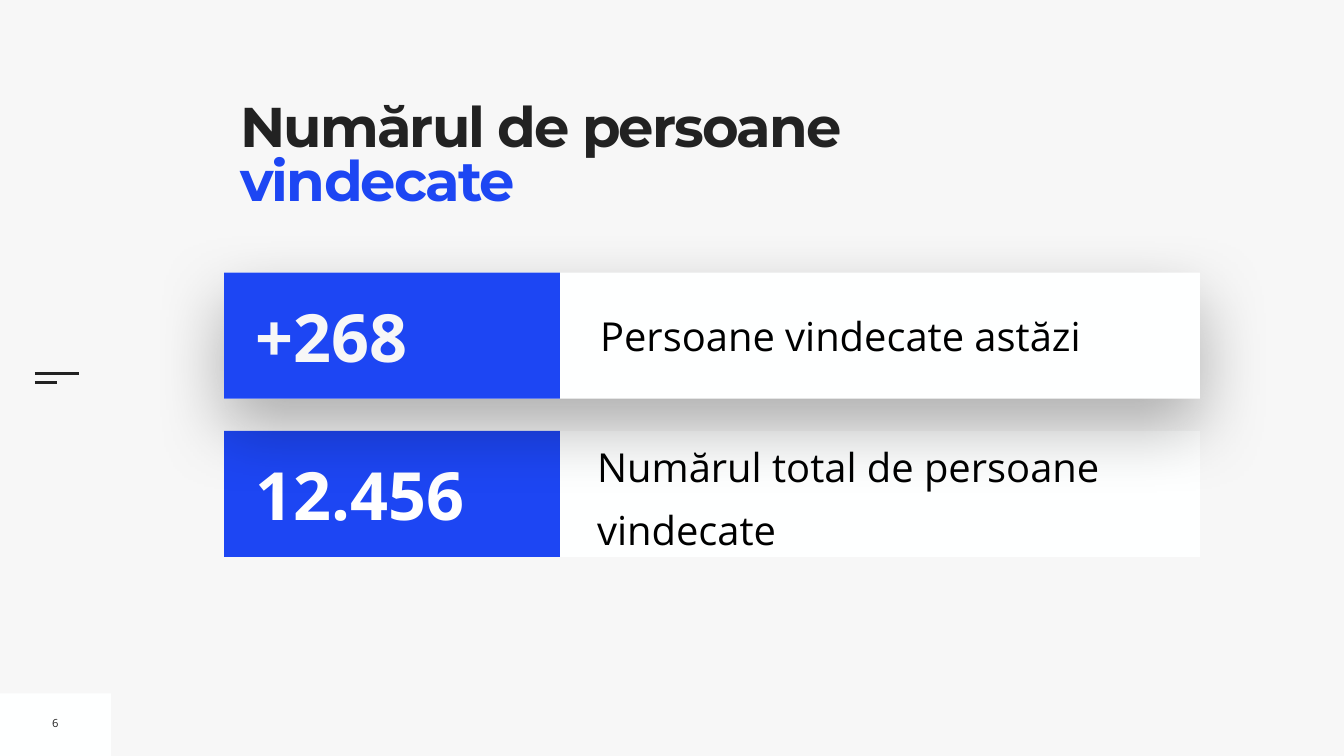
from dataclasses import dataclass

from lxml import etree
from pptx import Presentation
from pptx.dml.color import RGBColor
from pptx.enum.shapes import MSO_CONNECTOR, MSO_SHAPE
from pptx.enum.text import MSO_ANCHOR, PP_ALIGN
from pptx.oxml.ns import qn
from pptx.util import Inches, Pt

RECTANGLE = MSO_SHAPE.RECTANGLE
STRAIGHT = MSO_CONNECTOR.STRAIGHT
TOP, MIDDLE = MSO_ANCHOR.TOP, MSO_ANCHOR.MIDDLE
LEFT, CENTER = PP_ALIGN.LEFT, PP_ALIGN.CENTER


@dataclass(frozen=True)
class Theme:
    background: str = "F7F7F7"
    panel: str = "FEFFFF"
    accent: str = "1D46F3"
    dark: str = "222222"
    black: str = "000000"
    white: str = "FFFFFF"
    heading_font: str = "Montserrat"
    body_font: str = "Open Sans"
    title_size: int = 80
    figure_size: int = 95
    label_size: int = 57
    number_size: int = 16


class SlideBuilder:
    def __init__(self, slide, theme):
        self.slide = slide
        self.theme = theme
        slide.background.fill.solid()
        slide.background.fill.fore_color.rgb = RGBColor.from_string(theme.background)

    def group(self):
        return self.slide.shapes.add_group_shape().shapes

    def rectangle(self, box, color, shapes=None):
        shapes = self.slide.shapes if shapes is None else shapes
        shape = shapes.add_shape(RECTANGLE, *map(Inches, box))
        shape.shadow.inherit = False
        shape.fill.solid()
        shape.fill.fore_color.rgb = RGBColor.from_string(color)
        shape.line.fill.background()
        return shape

    def shadow(self, shape, blur, distance, opacity):
        effects = shape._element.spPr.find(qn("a:effectLst"))
        outer = etree.SubElement(
            effects, qn("a:outerShdw"), blurRad=str(Pt(blur)), dist=str(Pt(distance)),
            dir=str(90 * 60000), algn="ctr", rotWithShape="0")
        color = etree.SubElement(outer, qn("a:srgbClr"), val=self.theme.black)
        etree.SubElement(color, qn("a:alpha"), val=str(opacity * 1000))

    def line(self, left, right, top):
        connector = self.slide.shapes.add_connector(
            STRAIGHT, *map(Inches, (left, top, right, top)))
        connector.line.color.rgb = RGBColor.from_string(self.theme.dark)
        connector.line.width = Pt(3)
        etree.SubElement(connector._element.spPr, qn("a:effectLst"))

    def frame(self, shape, inset, anchor, wrap=True):
        margin = Inches(inset)
        values = {
            "margin_left": margin, "margin_right": margin, "margin_top": margin,
            "margin_bottom": margin, "vertical_anchor": anchor, "word_wrap": wrap,
        }
        for name, value in values.items():
            setattr(shape.text_frame, name, value)
        return shape.text_frame.paragraphs[0]

    def run(self, paragraph, text, font, size, color, bold=False):
        run = paragraph.add_run()
        run.text = text
        values = {"name": font, "size": Pt(size), "bold": bold}
        for name, value in values.items():
            setattr(run.font, name, value)
        run.font.color.rgb = RGBColor.from_string(color)
        return run

    def text(self, box, text, size, color, bold=False, inset=0.1, wrap=True,
             paragraph_format=None, shapes=None):
        shapes = self.slide.shapes if shapes is None else shapes
        shape = shapes.add_textbox(*map(Inches, box))
        paragraph = self.frame(shape, inset, MIDDLE, wrap)
        for name, value in (paragraph_format or {}).items():
            setattr(paragraph, name, value)
        self.run(paragraph, text, self.theme.body_font, size, color, bold)

    def title(self, box, parts):
        title = self.slide.shapes.title
        title.left, title.top, title.width, title.height = map(Inches, box)
        title.fill.solid()
        title.fill.fore_color.rgb = RGBColor.from_string(self.theme.background)
        paragraph = self.frame(title, 0, TOP)
        paragraph.alignment = LEFT
        paragraph.line_spacing = 0.8
        for text, color in parts:
            run = self.run(paragraph, text, self.theme.heading_font,
                           self.theme.title_size, color, bold=True)
            run.font._element.set("spc", "-270")

    def statistic(self, top, figure, figure_color, label, label_box,
                  label_format=None, label_inset=0.1, raised=False):
        shapes = self.group()
        panel = self.rectangle((4.45, top, 19.36, 2.5), self.theme.panel, shapes)
        if raised:
            self.shadow(panel, blur=100, distance=40, opacity=30)
        self.text(label_box, label, self.theme.label_size, self.theme.black,
                  inset=label_inset, paragraph_format=label_format, shapes=shapes)
        self.rectangle((4.45, top, 6.66, 2.5), self.theme.accent, shapes)
        self.text((4.98, top + 0.35, 6.03, 1.8), figure, self.theme.figure_size,
                  figure_color, bold=True, shapes=shapes)


def main():
    theme = Theme()
    presentation = Presentation()
    presentation.slide_width = Inches(26.67)
    presentation.slide_height = Inches(15)
    slide = presentation.slides.add_slide(presentation.slide_layouts[5])
    builder = SlideBuilder(slide, theme)

    builder.rectangle((0, 13.76, 2.2, 1.24), theme.panel)
    builder.line(0.69, 1.57, 7.41)
    builder.line(0.69, 1.13, 7.59)
    builder.title((4.77, 2.07, 13.01, 2.73),
                  [("Numărul de persoane ", theme.dark), ("vindecate", theme.accent)])
    builder.text((0.93, 14.09, 0.34, 0.51), "6", theme.number_size, theme.dark,
                 wrap=False, paragraph_format={"alignment": CENTER})
    builder.statistic(8.55, "12.456", theme.white, "Numărul total de persoane vindecate",
                      (11.85, 8.56, 11.95, 2.36), label_inset=0,
                      label_format={"line_spacing": 1.3, "space_before": Pt(20)})
    builder.statistic(5.41, "+268", theme.background, "Persoane vindecate astăzi",
                      (11.81, 6.07, 11.76, 1.16), raised=True)

    presentation.save("out.pptx")


if __name__ == "__main__":
    main()
